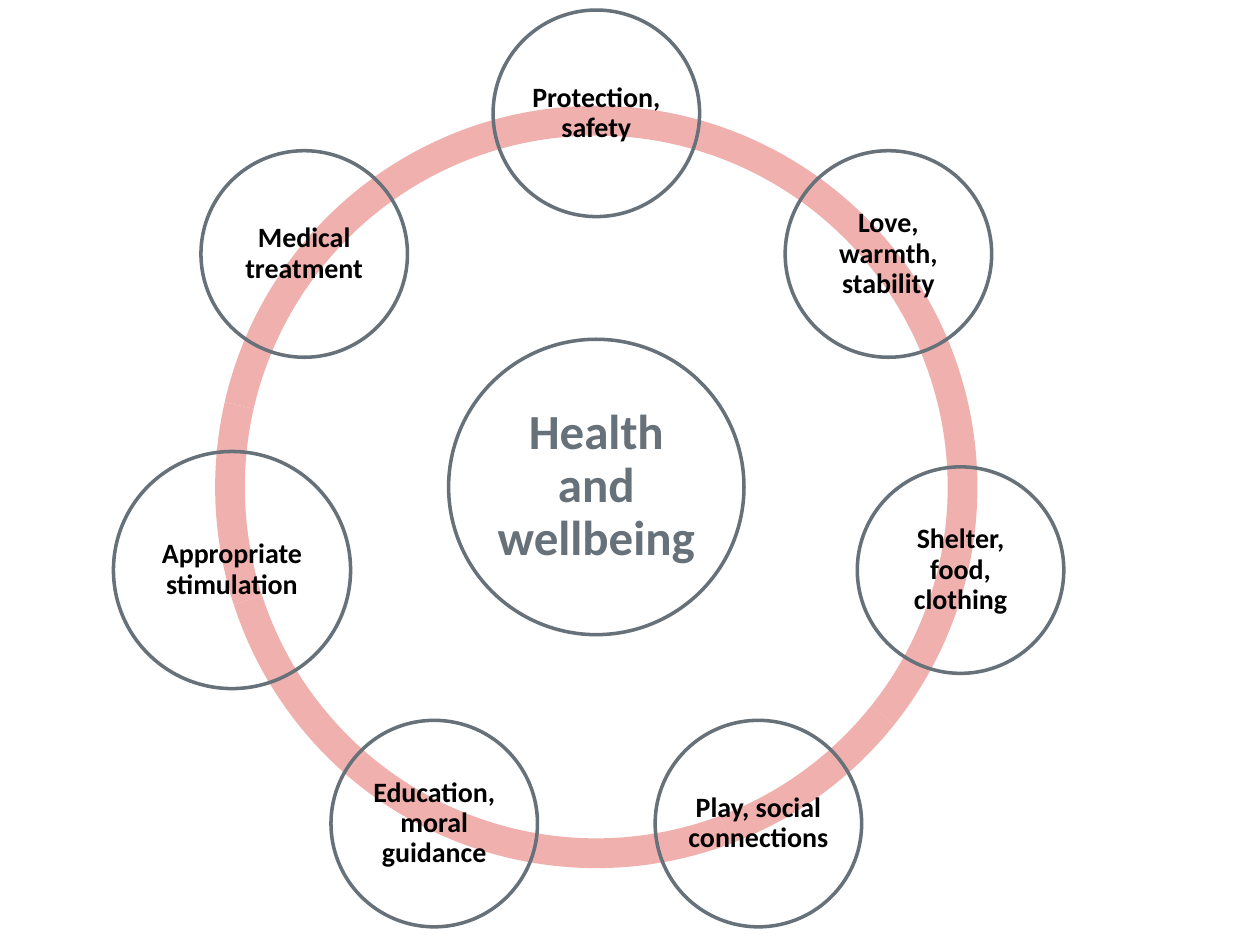
from dataclasses import dataclass
from itertools import pairwise
from math import cos, radians, sin

from pptx import Presentation
from pptx.dml.color import RGBColor
from pptx.enum.shapes import MSO_SHAPE
from pptx.enum.text import MSO_ANCHOR, PP_ALIGN
from pptx.util import Pt


@dataclass(frozen=True)
class Theme:
    font: str = "Calibri"
    ring: RGBColor = RGBColor(0xF0, 0xB0, 0xAE)
    slate: RGBColor = RGBColor(0x66, 0x71, 0x79)
    ink: RGBColor = RGBColor(0, 0, 0)
    hub_size: int = 28
    need_size: int = 16
    line: int = 2


class Wheel:
    """Draws a radial diagram around one centre, in points."""

    def __init__(self, slide, theme, x, y):
        self.shapes = slide.shapes.add_group_shape().shapes
        self.theme = theme
        self.x, self.y = x, y

    def shape(self, kind, x, y, size):
        item = self.shapes.add_shape(
            kind, Pt(x - size / 2), Pt(y - size / 2), Pt(size), Pt(size))
        item.shadow.inherit = False
        return item

    def arc(self, start, end, size):
        """Add a ring segment running clockwise between two angles in degrees."""
        item = self.shape(MSO_SHAPE.BLOCK_ARC, self.x, self.y, size)
        # Angles are stored in 60000ths, adjustments in 100000ths.
        item.adjustments[0] = start * 0.6
        item.adjustments[1] = end * 0.6
        item.adjustments[2] = 0.039
        item.fill.solid()
        item.fill.fore_color.rgb = self.theme.ring
        item.line.fill.background()

    def circle(self, text, size, type_size, color, inset, orbit=0, angle=0):
        """Add a labelled circle; angle is clockwise from the top."""
        turn = radians(angle)
        item = self.shape(MSO_SHAPE.OVAL, self.x + orbit * sin(turn),
                          self.y - orbit * cos(turn), size)
        item.fill.background()
        item.line.color.rgb = self.theme.slate
        item.line.width = Pt(self.theme.line)
        frame = item.text_frame
        frame.word_wrap = True
        frame.vertical_anchor = MSO_ANCHOR.MIDDLE
        frame.margin_left = frame.margin_right = Pt(inset)
        frame.margin_top = frame.margin_bottom = Pt(inset)
        para = frame.paragraphs[0]
        para.alignment = PP_ALIGN.CENTER
        para.line_spacing = 0.9
        run = para.add_run()
        run.text = text
        run.font.name = self.theme.font
        run.font.size = Pt(type_size)
        run.font.bold = True
        run.font.color.rgb = color


NEEDS = [
    ("Protection, safety", 118),
    ("Love, warmth, stability", 118),
    ("Shelter, food, clothing", 118),
    ("Play, social connections", 118),
    ("Education, moral guidance", 118),
    ("Appropriate stimulation", 135.5),
    ("Medical treatment", 118),
]


def main():
    deck = Presentation()
    deck.slide_width, deck.slide_height = Pt(720), Pt(540)
    slide = deck.slides.add_slide(deck.slide_layouts[6])
    theme = Theme()
    wheel = Wheel(slide, theme, 340.75, 278.25)

    # Six equal segments on one side; the last two close the ring.
    step = 216 / 7
    seams = [162 - step * i for i in range(6)] + [162 + step, 162]
    for end, start in pairwise(seams):
        wheel.arc(start, end, 435.6)

    wheel.circle("Health and wellbeing", 168.8, theme.hub_size, theme.slate, 2.6)
    for i, (text, size) in enumerate(NEEDS):
        wheel.circle(text, size, theme.need_size, theme.ink, 1.5,
                     orbit=213.5, angle=360 / len(NEEDS) * i)

    deck.save("out.pptx")


if __name__ == "__main__":
    main()
